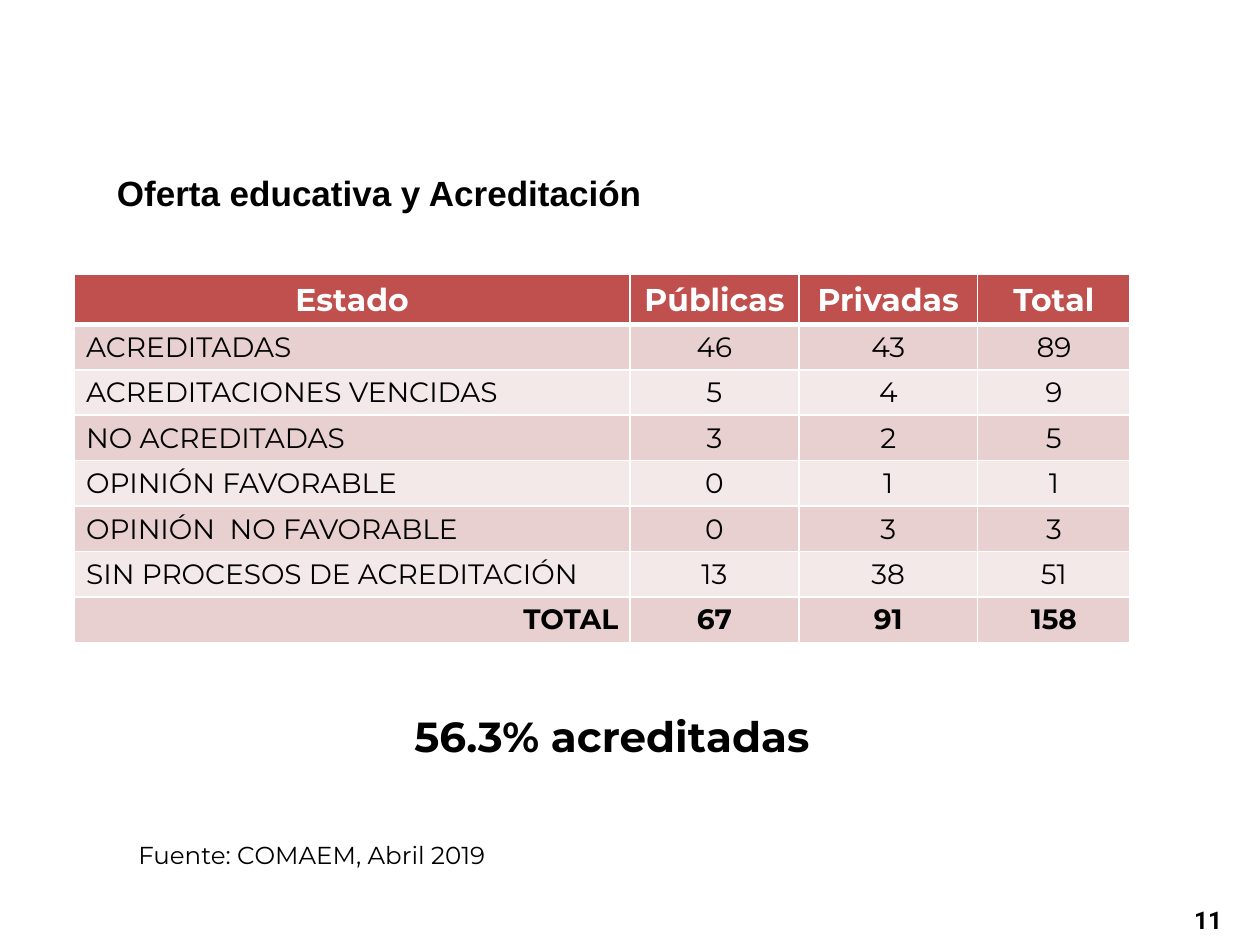
from lxml.etree import SubElement
from pptx import Presentation
from pptx.dml.color import RGBColor
from pptx.enum.text import MSO_AUTO_SIZE as AutoSize, PP_ALIGN as Align
from pptx.oxml.ns import qn
from pptx.util import Inches, Pt

BLACK = RGBColor(0x00, 0x00, 0x00)
WHITE = RGBColor(0xFF, 0xFF, 0xFF)
RED = RGBColor(0xC0, 0x50, 0x4D)
BANDS = [RGBColor(0xF4, 0xE9, 0xE9), RGBColor(0xE8, 0xD0, 0xD0)]

# The slide is divided into 100 columns and 75 rows
presentation = Presentation()
presentation.slide_width = Inches(10)
presentation.slide_height = Inches(7.5)
COLUMN = presentation.slide_width // 100
ROW = presentation.slide_height // 75
slide = presentation.slides.add_slide(presentation.slide_layouts[6])


def write(frame, text, font="Montserrat", size=16, bold=False, color=BLACK, align=Align.LEFT):
    paragraph = frame.paragraphs[0]
    paragraph.alignment = align
    run = paragraph.add_run()
    run.text = text
    run.font.name = font
    run.font.size = Pt(size)
    run.font.bold = bold
    run.font.color.rgb = color


def add_border(cell, side, width):
    line = SubElement(cell._tc.get_or_add_tcPr(), qn(f"a:ln{side}"), w=str(Pt(width)))
    fill = SubElement(line, qn("a:solidFill"))
    SubElement(fill, qn("a:srgbClr"), val=str(WHITE))


# Title, source, key figure and slide number
texts = [
    ("Oferta educativa y Acreditación", (8.3, 13.1, 44, 4.4), False,
     dict(font="Arial", size=20, bold=True)),
    ("Fuente: COMAEM, Abril 2019", (9.8, 66.2, 29.9, 3.4), False,
     dict(size=14, align=Align.CENTER)),
    ("56.3% acreditadas", (31.9, 55.9, 33.6, 5), False, dict(size=24, bold=True)),
    ("11", (74.7, 71.3, 23.3, 4), True,
     dict(font="Roboto", size=14, bold=True, align=Align.RIGHT)),
]
for text, (left, top, width, height), wrap, style in texts:
    box = slide.shapes.add_textbox(
        int(left * COLUMN), int(top * ROW), int(width * COLUMN), int(height * ROW))
    frame = box.text_frame
    frame.word_wrap = wrap
    frame.auto_size = AutoSize.NONE if wrap else AutoSize.SHAPE_TO_FIT_TEXT
    write(frame, text, **style)

# Accreditation table
records = [
    ("Estado", "Públicas", "Privadas", "Total"),
    ("ACREDITADAS", 46, 43, 89),
    ("ACREDITACIONES VENCIDAS", 5, 4, 9),
    ("NO ACREDITADAS", 3, 2, 5),
    ("OPINIÓN FAVORABLE", 0, 1, 1),
    ("OPINIÓN  NO FAVORABLE", 0, 3, 3),
    ("SIN PROCESOS DE ACREDITACIÓN", 13, 38, 51),
    ("TOTAL", 67, 91, 158),
]
column_widths = [44.1, 13.4, 14.2, 12.1]
last = len(records) - 1
table = slide.shapes.add_table(
    len(records), len(column_widths), int(5.9 * COLUMN), int(21.8 * ROW),
    int(sum(column_widths) * COLUMN), int(29.7 * ROW)).table
for column, width in zip(table.columns, column_widths):
    column.width = int(width * COLUMN)
for table_row in table.rows:
    table_row.height = int(3.4 * ROW)

for r, record in enumerate(records):
    header = r == 0
    for c, value in enumerate(record):
        cell = table.cell(r, c)
        cell.margin_left = cell.margin_right = Pt(6.8)
        cell.margin_top = cell.margin_bottom = Pt(3.4)
        for side in "LRTB":
            thick = (header and side == "B") or (r == 1 and side == "T")
            add_border(cell, side, 3 if thick else 1)
        cell.fill.solid()
        cell.fill.fore_color.rgb = RED if header else BANDS[r % 2]
        if header or c > 0:
            align = Align.CENTER
        else:
            align = Align.RIGHT if r == last else Align.LEFT
        write(cell.text_frame, str(value), size=18 if header else 16,
              bold=r in (0, last), color=WHITE if header else BLACK, align=align)

presentation.save("out.pptx")
